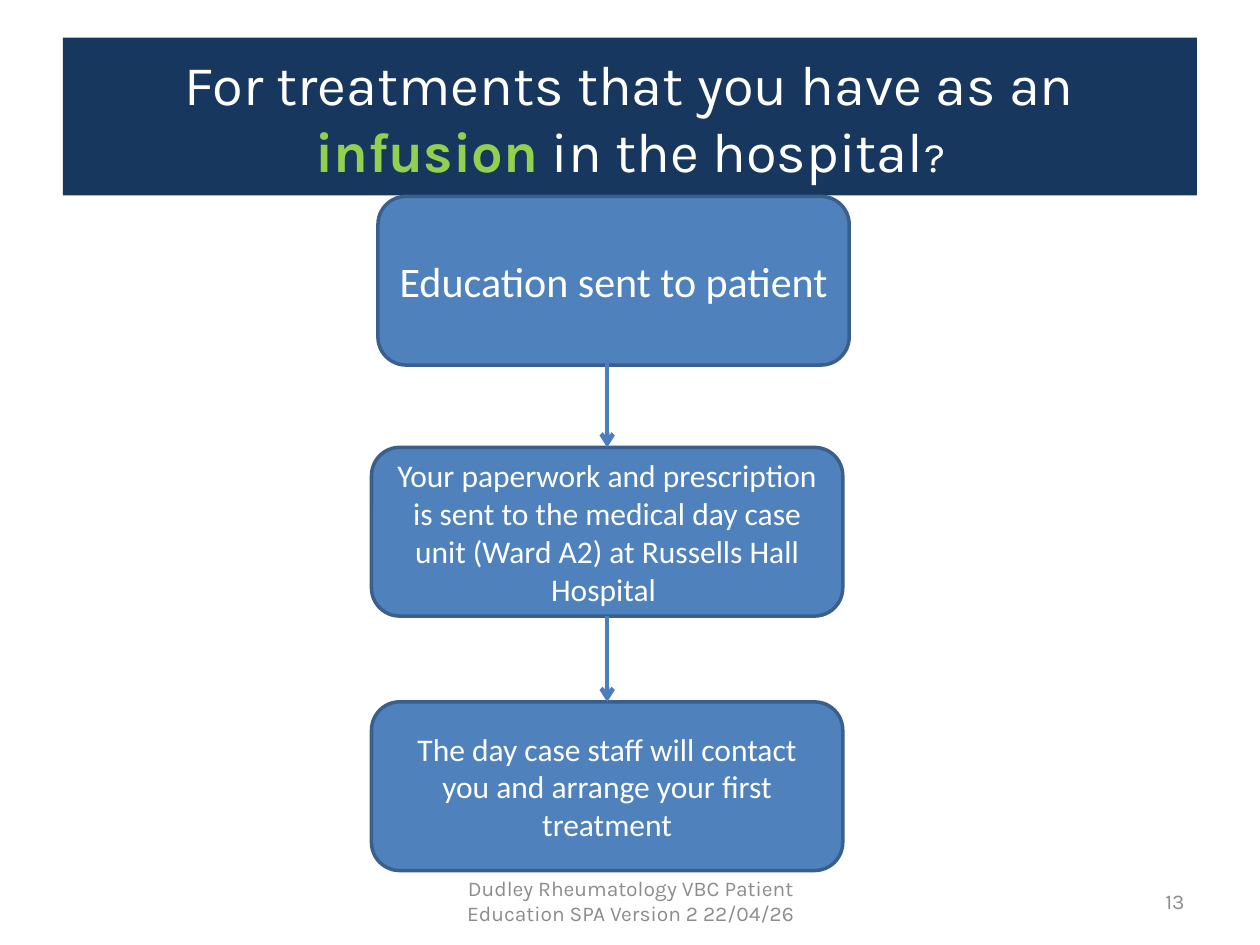
from dataclasses import dataclass

from lxml import etree
from pptx import Presentation
from pptx.dml.color import RGBColor as RGB
from pptx.enum.shapes import MSO_CONNECTOR as CONN, MSO_SHAPE as SHAPE
from pptx.enum.text import MSO_ANCHOR as ANCHOR, PP_ALIGN as ALIGN
from pptx.oxml.ns import qn
from pptx.util import Cm, Pt


@dataclass(frozen=True)
class Theme:
    navy: RGB = RGB.from_string("17375E")
    blue: RGB = RGB.from_string("4F81BD")
    edge: RGB = RGB.from_string("3A5F8C")
    arrow: RGB = RGB.from_string("4B7EBC")
    green: RGB = RGB.from_string("92D050")
    white: RGB = RGB.from_string("FFFFFF")
    grey: RGB = RGB.from_string("8C8C8C")
    heading_font: str = "Karla"
    body_font: str = "Calibri"
    title: int = 32
    large: int = 24
    body: int = 18
    footer: int = 12


T = Theme()


def style(font, name, size, color):
    font.name, font.size = name, Pt(size)
    font.color.rgb = color


def set_text(sp, text, name, size, color, align=ALIGN.CENTER):
    tf = sp.text_frame
    tf.word_wrap = True
    tf.vertical_anchor = ANCHOR.MIDDLE
    p = tf.paragraphs[0]
    p.alignment = align
    if text:
        p.add_run().text = text
    style(p.font, name, size, color)
    return p


def add_title(s):
    sp = s.shapes.add_shape(SHAPE.RECTANGLE, Cm(1.27), Cm(0.76), Cm(22.86), Cm(3.18))
    sp.shadow.inherit = False
    sp.fill.solid()
    sp.fill.fore_color.rgb = T.navy
    sp.line.fill.background()
    p = set_text(sp, "", T.heading_font, T.title, T.white)
    for text, color, size, bold in (
        ("For treatments that you have as an ", T.white, T.title, False),
        ("infusion", T.green, T.title, True),
        (" in the hospital", T.white, T.title, False),
        ("?", T.white, T.large, False),
    ):
        r = p.add_run()
        r.text = text
        style(r.font, T.heading_font, size, color)
        r.font.bold = bold


def add_step(s, left, top, text, size):
    sp = s.shapes.add_shape(SHAPE.ROUNDED_RECTANGLE, Cm(left), Cm(top), Cm(9.5), Cm(3.4))
    sp.shadow.inherit = False
    sp.fill.solid()
    sp.fill.fore_color.rgb = T.blue
    sp.line.color.rgb = T.edge
    sp.line.width = Pt(2)
    set_text(sp, text, T.body_font, size, T.white)
    return sp


def add_arrow(s, target, source=None, top=0):
    x = target.left + target.width // 2
    cxn = s.shapes.add_connector(CONN.STRAIGHT, x, Cm(top), x, target.top)
    if source is not None:
        cxn.begin_connect(source, 2)
    cxn.end_connect(target, 0)
    cxn.line.color.rgb = T.arrow
    cxn.line.width = Pt(2.5)
    etree.SubElement(cxn.line._get_or_add_ln(), qn("a:tailEnd"), type="arrow")
    etree.SubElement(cxn._element.spPr, qn("a:effectLst"))


def add_footer(s, left, width, text, align):
    sp = s.shapes.add_textbox(Cm(left), Cm(17.65), Cm(width), Cm(1.02))
    set_text(sp, text, T.heading_font, T.footer, T.grey, align)


def main():
    """Build the slide on the infusion treatment pathway."""
    prs = Presentation()
    prs.slide_width, prs.slide_height = Cm(25.4), Cm(19.05)
    s = prs.slides.add_slide(prs.slide_layouts[6])
    add_title(s)
    contact = add_step(s, 7.49, 14.15, "The day case staff will contact you and arrange "
                       "your first treatment", T.body)
    paperwork = add_step(s, 7.49, 9.02, "Your paperwork and prescription is sent to the medical "
                         "day case unit (Ward A2) at Russells Hall Hospital ", T.body)
    add_step(s, 7.62, 3.96, "Education sent to patient", T.large)
    add_arrow(s, paperwork, top=7.26)
    add_arrow(s, contact, source=paperwork)
    add_footer(s, 18.21, 5.92, "13", ALIGN.RIGHT)
    add_footer(s, 8.69, 8.05, "Dudley Rheumatology VBC Patient Education SPA "
               "Version 2 22/04/26", ALIGN.CENTER)
    prs.save("out.pptx")


if __name__ == "__main__":
    main()
